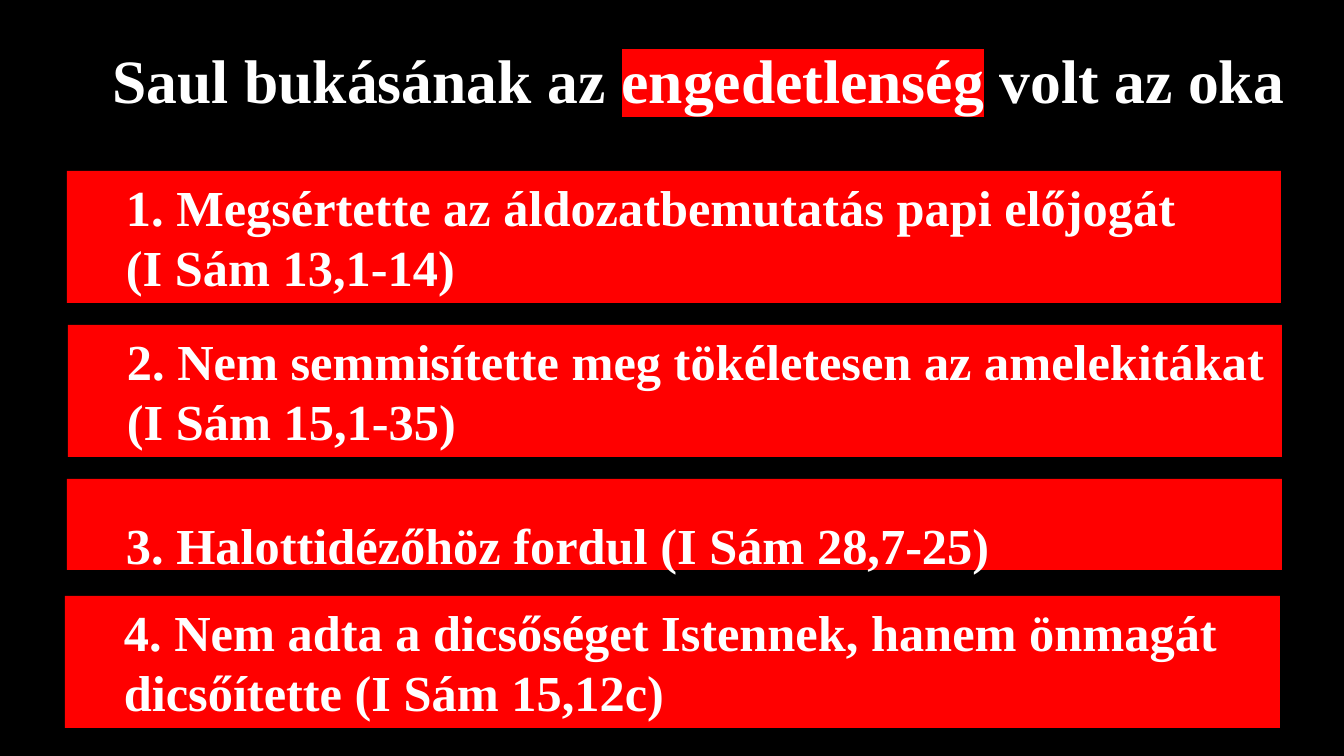
from pptx import Presentation
from pptx.dml.color import RGBColor
from pptx.enum.shapes import MSO_SHAPE
from pptx.enum.text import MSO_ANCHOR, MSO_AUTO_SIZE, PP_ALIGN
from pptx.util import Pt
from lxml.etree import SubElement
from pptx.oxml.ns import qn

PX = 914400 / 100.8
RED, WHITE, BLACK = "FF0000", "FFFFFF", "000000"


def rgb(color):
    return RGBColor.from_string(color)


def style(p, size, align, spacing):
    """Bold white serif text with a first-line indent."""
    pPr = p._p.get_or_add_pPr()
    pPr.set("marL", "0")
    pPr.set("indent", str(round(49 * PX)))
    p.alignment = align
    p.line_spacing = spacing
    p.font.name = "Times New Roman"
    p.font.size = Pt(size)
    p.font.bold = True
    p.font.color.rgb = rgb(WHITE)


prs = Presentation()
prs.slide_width, prs.slide_height = round(1344 * PX), round(756 * PX)
s = prs.slides.add_slide(prs.slide_layouts[5])
s.background.fill.solid()
s.background.fill.fore_color.rgb = rgb(BLACK)

# Title
title = s.shapes.title
title.left, title.top, title.width, title.height = (
    round(v * PX) for v in (2, 0, 1344, 109))
tf = title.text_frame
tf.word_wrap = True
tf.vertical_anchor = MSO_ANCHOR.TOP
tf.auto_size = MSO_AUTO_SIZE.SHAPE_TO_FIT_TEXT
p = tf.paragraphs[0]
style(p, 44, PP_ALIGN.CENTER, 1.5)
for text in ("Saul bukásának az ", "engedetlenség", " volt az oka"):
    r = p.add_run()
    r.text = text
    if text == "engedetlenség":
        highlight = SubElement(r._r.get_or_add_rPr(), qn("a:highlight"))
        SubElement(highlight, qn("a:srgbClr")).set("val", RED)

# Reasons: left, top, width, height, alignment, line spacing, lines
reasons = [
    (67, 171, 1214, 132, PP_ALIGN.LEFT, 1.0,
     ["1. Megsértette az áldozatbemutatás papi előjogát", "(I Sám 13,1-14)"]),
    (68, 325, 1214, 132, PP_ALIGN.JUSTIFY, 1.0,
     ["2. Nem semmisítette meg tökéletesen az amelekitákat", "(I Sám 15,1-35)"]),
    (67, 479, 1215, 91, PP_ALIGN.LEFT, 1.5,
     ["3. Halottidézőhöz fordul (I Sám 28,7-25)"]),
    (65, 596, 1215, 132, PP_ALIGN.JUSTIFY, 1.0,
     ["4. Nem adta a dicsőséget Istennek, hanem önmagát",
      "dicsőítette (I Sám 15,12c)"]),
]
for *box, align, spacing, lines in reasons:
    sp = s.shapes.add_shape(MSO_SHAPE.RECTANGLE, *(round(v * PX) for v in box))
    sp.shadow.inherit = False
    sp.fill.solid()
    sp.fill.fore_color.rgb = rgb(RED)
    sp.line.fill.background()
    tf = sp.text_frame
    tf.word_wrap = True
    tf.vertical_anchor = MSO_ANCHOR.TOP
    tf.auto_size = MSO_AUTO_SIZE.SHAPE_TO_FIT_TEXT
    tf.text = "\n".join(lines)
    for p in tf.paragraphs:
        style(p, 36, align, spacing)

prs.save("out.pptx")
